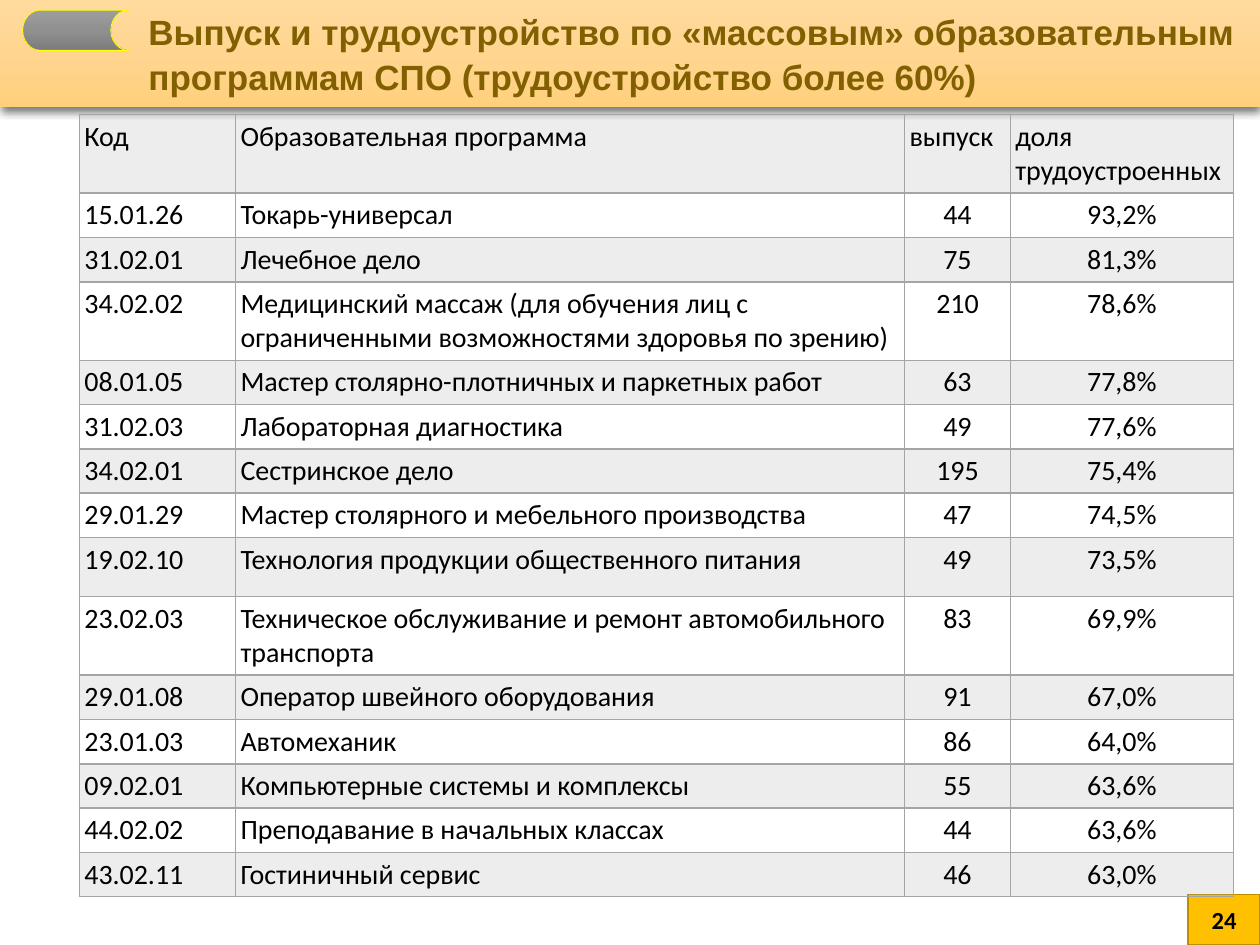
from copy import deepcopy

from lxml.etree import SubElement
from pptx import Presentation
from pptx.dml.color import RGBColor
from pptx.enum.shapes import MSO_SHAPE
from pptx.enum.text import MSO_ANCHOR, PP_ALIGN
from pptx.oxml import parse_xml
from pptx.oxml.ns import nsdecls, qn
from pptx.util import Inches, Pt

COLORS = {
    "title": "806000", "text": "000000", "grid": "A5A5A5",
    "badge": "FFC000", "edge": "BD8E00", "yellow": "FFFF00",
}
BANNER = ["FFDB9E", "FFD590", "FFD07C"]
STEEL = ["9D9D9D", "909090", "7C7C7C"]

TITLE = ("Выпуск и трудоустройство по «массовым» образовательным "
         "программам СПО (трудоустройство более 60%)")

ROWS = [
    ("Код", "Образовательная программа", "выпуск", "доля трудоустроенных"),
    ("15.01.26", "Токарь-универсал", "44", "93,2%"),
    ("31.02.01", "Лечебное дело", "75", "81,3%"),
    ("34.02.02", "Медицинский массаж (для обучения лиц с ограниченными "
     "возможностями здоровья по зрению)", "210", "78,6%"),
    ("08.01.05", "Мастер столярно-плотничных и паркетных работ", "63", "77,8%"),
    ("31.02.03", "Лабораторная диагностика", "49", "77,6%"),
    ("34.02.01", "Сестринское дело", "195", "75,4%"),
    ("29.01.29", "Мастер столярного и мебельного производства", "47", "74,5%"),
    ("19.02.10", "Технология продукции общественного питания", "49", "73,5%"),
    ("23.02.03", "Техническое обслуживание и ремонт автомобильного транспорта",
     "83", "69,9%"),
    ("29.01.08", "Оператор швейного оборудования", "91", "67,0%"),
    ("23.01.03", "Автомеханик", "86", "64,0%"),
    ("09.02.01", "Компьютерные системы и комплексы", "55", "63,6%"),
    ("44.02.02", "Преподавание в начальных классах", "44", "63,6%"),
    ("43.02.11", "Гостиничный сервис", "46", "63,0%"),
]
WIDTHS = [1.24, 5.31, 0.84, 1.77]
LINE = 0.35
TALL = {0: 0.62, 3: 0.62, 8: 0.47, 9: 0.62}


def rgb(name):
    return RGBColor.from_string(COLORS.get(name, name))


def set_text(frame, text, size, font, color="text", bold=False, align=PP_ALIGN.LEFT):
    frame.text = text
    par = frame.paragraphs[0]
    par.alignment = align
    face = par.runs[0].font
    face.size, face.name, face.bold = Pt(size), font, bold
    face.color.rgb = rgb(color)
    return par


def add_box(slide, kind, box, line=None, width=1):
    shape = slide.shapes.add_shape(kind, *map(Inches, box))
    shape.shadow.inherit = False
    if line:
        shape.line.color.rgb = rgb(line)
        shape.line.width = Pt(width)
    else:
        shape.line.fill.background()
    return shape


def set_grad(shape, tones):
    """Fill from top to bottom with three evenly spaced tones."""
    fill = shape.fill
    fill.gradient()
    fill.gradient_angle = 270
    first = shape._element.spPr.find(".//" + qn("a:gs"))
    first.addnext(deepcopy(first))
    for i, (stop, tone) in enumerate(zip(fill.gradient_stops, tones)):
        stop.position = i / 2
        stop.color.rgb = rgb(tone)


def add_shade(shape):
    effect = shape._element.spPr.find(qn("a:effectLst"))
    effect.append(parse_xml(
        f'<a:outerShdw {nsdecls("a")} blurRad="{Pt(4.5)}" dist="{Pt(2.6)}" '
        'dir="5400000" rotWithShape="0"><a:srgbClr val="000000">'
        '<a:alpha val="53000"/></a:srgbClr></a:outerShdw>'))


def add_banner(slide):
    bar = add_box(slide, MSO_SHAPE.RECTANGLE, (0, 0, 10, 0.85))
    set_grad(bar, BANNER)
    add_shade(bar)
    frame = bar.text_frame
    frame.word_wrap = True
    frame.vertical_anchor = MSO_ANCHOR.TOP
    frame.margin_top = Inches(0.07)
    par = set_text(frame, TITLE, 20, "Arial", "title", True)
    par.line_spacing = 1.05
    par._p.get_or_add_pPr().set("marL", str(Inches(1.08)))
    tab = add_box(slide, MSO_SHAPE.FLOWCHART_STORED_DATA,
                  (0.18, 0.08, 0.84, 0.32), "yellow", 0.5)
    set_grad(tab, STEEL)


def add_badge(slide):
    badge = add_box(slide, MSO_SHAPE.RECTANGLE, (9.43, 7.1, 0.57, 0.4), "edge")
    badge.fill.solid()
    badge.fill.fore_color.rgb = rgb("badge")
    badge.text_frame.vertical_anchor = MSO_ANCHOR.MIDDLE
    set_text(badge.text_frame, "24", 14, "Calibri", bold=True, align=PP_ALIGN.CENTER)


def style_cell(cell, shaded):
    cell.margin_left = cell.margin_right = Inches(0.04)
    cell.margin_top = cell.margin_bottom = Inches(0.04)
    props = cell._tc.get_or_add_tcPr()
    # Borders come before the fill
    for side in ("lnL", "lnR", "lnT", "lnB"):
        props.append(parse_xml(
            f'<a:{side} {nsdecls("a")} w="{Pt(1)}"><a:solidFill>'
            f'<a:srgbClr val="{COLORS["grid"]}"/></a:solidFill></a:{side}>'))
    if shaded:
        cell.fill.solid()
        cell.fill.fore_color.rgb = rgb("grid")
        tone = props.find(qn("a:solidFill")).find(qn("a:srgbClr"))
        SubElement(tone, qn("a:alpha")).set("val", "20000")
    else:
        cell.fill.background()


def add_grid(slide):
    highs = [TALL.get(i, LINE) for i in range(len(ROWS))]
    box = (0.63, 0.91, sum(WIDTHS), sum(highs))
    table = slide.shapes.add_table(len(ROWS), len(WIDTHS), *map(Inches, box)).table
    for col, width in zip(table.columns, WIDTHS):
        col.width = Inches(width)
    for r, (row, high) in enumerate(zip(ROWS, highs)):
        table.rows[r].height = Inches(high)
        for c, text in enumerate(row):
            cell = table.cell(r, c)
            style_cell(cell, r % 2 == 0)
            align = PP_ALIGN.CENTER if r and c > 1 else PP_ALIGN.LEFT
            set_text(cell.text_frame, text, 16, "Calibri", align=align)
            if r == len(ROWS) - 1:
                cell.vertical_anchor = MSO_ANCHOR.BOTTOM


def main():
    deck = Presentation()
    deck.slide_width, deck.slide_height = Inches(10), Inches(7.5)
    slide = deck.slides.add_slide(deck.slide_layouts[6])
    add_banner(slide)
    add_badge(slide)
    add_grid(slide)
    deck.save("out.pptx")


if __name__ == "__main__":
    main()
